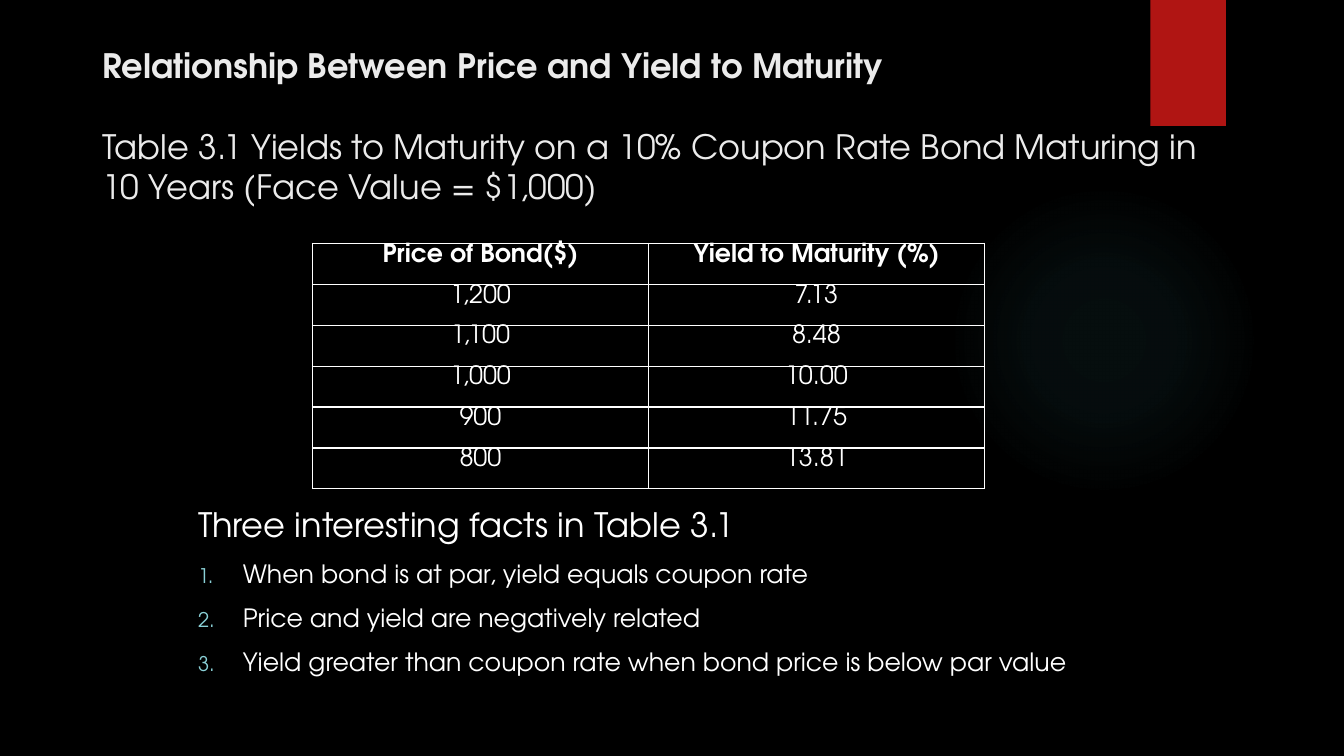
from dataclasses import dataclass

from lxml import etree
from pptx import Presentation
from pptx.dml.color import RGBColor
from pptx.enum.shapes import MSO_SHAPE
from pptx.enum.text import MSO_ANCHOR, PP_ALIGN
from pptx.oxml import parse_xml
from pptx.oxml.ns import nsdecls, qn
from pptx.util import Pt

RECT, OVAL = MSO_SHAPE.RECTANGLE, MSO_SHAPE.OVAL
LEFT, CENTER = PP_ALIGN.LEFT, PP_ALIGN.CENTER
TOP = MSO_ANCHOR.TOP
FONT = "TeX Gyre Adventor"
WHITE, PALE, RED, TEAL, AQUA = "FFFFFF", "EBEBEB", "B01513", "50B9C1", "8AD0D6"


@dataclass
class Box:
    left: float
    top: float
    width: float
    height: float

    def pts(self) -> tuple:
        return Pt(self.left), Pt(self.top), Pt(self.width), Pt(self.height)


@dataclass
class Line:
    text: str
    size: float
    color: str = WHITE
    bold: bool = False
    gap: float = 0
    number: bool = False
    align: PP_ALIGN = LEFT


TITLE = [
    Line("Relationship Between Price and Yield to Maturity", 24, PALE, True),
    Line("Table 3.1 Yields to Maturity on a 10% Coupon Rate Bond Maturing in "
         "10 Years (Face Value = $1,000)", 24, PALE, gap=28.6),
]
FACTS = [
    "When bond is at par, yield equals coupon rate",
    "Price and yield are negatively related",
    "Yield greater than coupon rate when bond price is below par value",
]
YIELDS = [
    ("Price of Bond($)", "Yield to Maturity (%)"),
    ("1,200", "7.13"),
    ("1,100", "8.48"),
    ("1,000", "10.00"),
    ("900", "11.75"),
    ("800", "13.81"),
]


def rgb(color: str) -> RGBColor:
    return RGBColor.from_string(color)


def add_number(para) -> None:
    """Give the paragraph an automatic number and a hanging indent."""
    props = para._p.get_or_add_pPr()
    props.set("marL", str(Pt(32)))
    props.set("indent", str(-Pt(32)))
    tint = etree.SubElement(props, qn("a:buClr"))
    etree.SubElement(tint, qn("a:srgbClr"), val=AQUA)
    etree.SubElement(props, qn("a:buSzPct"), val="80000")
    etree.SubElement(props, qn("a:buFont"), typeface=FONT)
    etree.SubElement(props, qn("a:buAutoNum"), type="arabicPeriod")


def write(frame, lines: list[Line]) -> None:
    for i, line in enumerate(lines):
        para = frame.add_paragraph() if i else frame.paragraphs[0]
        para.text = line.text
        if line.number:
            add_number(para)
        para.alignment = line.align
        para.space_before = Pt(line.gap)
        font = para.font
        font.name, font.size, font.bold = FONT, Pt(line.size), line.bold
        font.color.rgb = rgb(line.color)


def add_text(slide, box: Box, lines: list[Line]) -> None:
    frame = slide.shapes.add_textbox(*box.pts()).text_frame
    frame.word_wrap = True
    frame.vertical_anchor = TOP
    write(frame, lines)


def add_shape(slide, kind: MSO_SHAPE, box: Box, color: str):
    shape = slide.shapes.add_shape(kind, *box.pts())
    shape.shadow.inherit = False
    shape.fill.solid()
    shape.fill.fore_color.rgb = rgb(color)
    shape.line.fill.background()
    return shape


def add_glow(slide, box: Box) -> None:
    """Draw a circle that fades out from its centre."""
    oval = add_shape(slide, OVAL, box, TEAL)
    stops = "".join(
        f'<a:gs pos="{pos}000"><a:srgbClr val="{TEAL}">'
        f'<a:alpha val="{alpha}000"/></a:srgbClr></a:gs>'
        for pos, alpha in ((0, 7), (36, 6), (69, 0)))
    fade = parse_xml(
        f'<a:gradFill {nsdecls("a")}><a:gsLst>{stops}</a:gsLst>'
        '<a:path path="circle"><a:fillToRect l="50000" t="50000" r="50000" '
        'b="50000"/></a:path></a:gradFill>')
    props = oval._element.spPr
    props.replace(props.find(qn("a:solidFill")), fade)


def add_edges(cell) -> None:
    props = cell._tc.get_or_add_tcPr()
    for i, side in enumerate("LRTB"):
        props.insert(i, parse_xml(
            f'<a:ln{side} {nsdecls("a")} w="{Pt(1)}"><a:solidFill>'
            f'<a:srgbClr val="{WHITE}"/></a:solidFill></a:ln{side}>'))


def add_grid(slide, box: Box, rows: list[tuple[str, str]]) -> None:
    table = slide.shapes.add_table(len(rows), len(rows[0]), *box.pts()).table
    table.first_row = table.horz_banding = False
    for r, row in enumerate(rows):
        for c, text in enumerate(row):
            cell = table.cell(r, c)
            cell.margin_top = cell.margin_bottom = 0
            cell.vertical_anchor = TOP
            cell.fill.background()
            add_edges(cell)
            write(cell.text_frame,
                  [Line(text, 18, bold=r == 0, align=CENTER)])


def main() -> None:
    deck = Presentation()
    deck.slide_width, deck.slide_height = Pt(960), Pt(540)
    slide = deck.slides.add_slide(deck.slide_layouts[6])
    back = slide.background.fill
    back.solid()
    back.fore_color.rgb = rgb("000000")

    add_glow(slide, Box(677.5, 131.8, 221.8, 221.8))
    add_shape(slide, RECT, Box(821.7, 0, 54, 90), RED)
    add_text(slide, Box(66, 28.8, 828, 126.7), TITLE)
    facts = [Line("Three interesting facts in Table 3.1", 24)]
    facts += [Line(text, 18, gap=10, number=True) for text in FACTS]
    add_text(slide, Box(134.4, 356.4, 648, 158.4), facts)
    add_grid(slide, Box(223.2, 174, 480, 175.2), YIELDS)
    deck.save("out.pptx")


if __name__ == "__main__":
    main()
